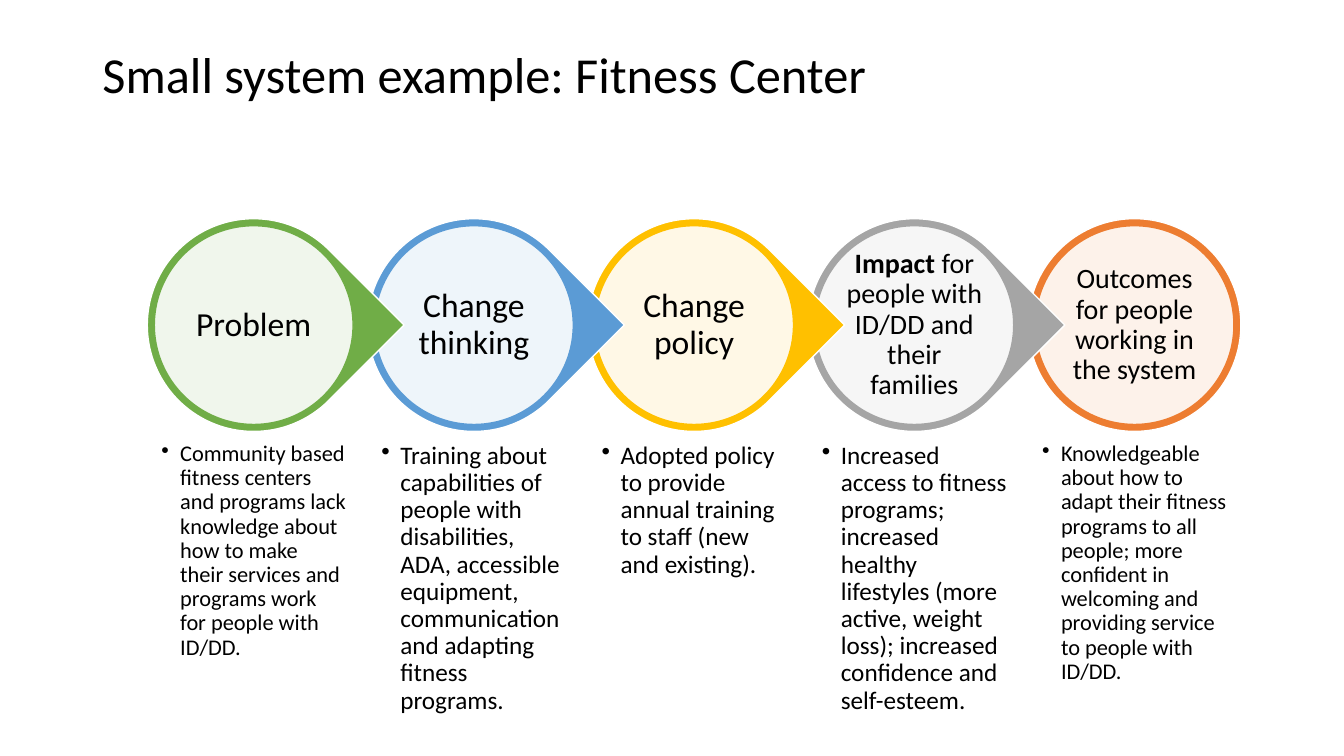
"""Build a slide of five linked circles, from problem to outcomes."""
import pptx
import pptx.util
import pptx.oxml.ns
import pptx.dml.color
import pptx.enum.shapes
import pptx.enum.text
import lxml.etree
from dataclasses import dataclass

Pt = pptx.util.Pt
Kind = pptx.enum.shapes.MSO_SHAPE
Align = pptx.enum.text.PP_ALIGN
Anchor = pptx.enum.text.MSO_ANCHOR


@dataclass(frozen=True)
class Theme:
    """Colours, font and type sizes."""
    font: str = "Calibri"
    ink: str = "000000"
    white: str = "FFFFFF"
    green: str = "70AD47"
    blue: str = "5B9BD5"
    gold: str = "FFC000"
    grey: str = "A5A5A5"
    orange: str = "ED7D31"
    title: int = 36
    big: int = 24
    mid: int = 20
    body: int = 18
    small: int = 16


THEME = Theme()
START, PITCH, MIDDLE = 181.2, 157.3, 232.2
OUTER, INNER, LABEL = 152, 142, 101.5
NOTE_TOP, NOTE_HIGH = 311, 83.5

STEPS = [
    (THEME.green, "", "Problem", THEME.big,
     "Community based fitness centers and programs lack knowledge about "
     "how to make their services and programs work for people with ID/DD.",
     THEME.small),
    (THEME.blue, "", "Change thinking", THEME.big,
     "Training about capabilities of people with disabilities, ADA, accessible "
     "equipment, communication and adapting fitness programs.",
     THEME.body),
    (THEME.gold, "", "Change policy", THEME.big,
     "Adopted policy to provide annual training to staff (new and existing).",
     THEME.body),
    (THEME.grey, "Impact", " for people with ID/DD and their families", THEME.mid,
     "Increased access to fitness programs; increased healthy lifestyles "
     "(more active, weight loss); increased confidence and self-esteem.",
     THEME.body),
    (THEME.orange, "", "Outcomes for people working in the system", THEME.mid,
     "Knowledgeable about how to adapt their fitness programs to all people; "
     "more confident in welcoming and providing service to people with ID/DD.",
     THEME.small),
]


def color(code):
    """Turn a hex code into a colour."""
    return pptx.dml.color.RGBColor.from_string(code)


def child(parent, tag, **attrs):
    """Add a drawing element to an XML parent."""
    name = pptx.oxml.ns.qn(tag)
    return lxml.etree.SubElement(parent, name, attrs)


def write(shape, text, *, size, lead="", align=Align.LEFT,
          anchor=Anchor.TOP, inset=None, bullet=False):
    """Write one paragraph, with an optional bold lead, into a shape."""
    frame = shape.text_frame
    frame.word_wrap = True
    frame.auto_size = pptx.enum.text.MSO_AUTO_SIZE.NONE
    frame.vertical_anchor = anchor
    if inset is not None:
        frame.margin_left = frame.margin_right = Pt(inset)
        frame.margin_top = frame.margin_bottom = Pt(inset)
    para = frame.paragraphs[0]
    para.alignment = align
    para.line_spacing = 0.9
    for part, bold in ((lead, True), (text, False)):
        if part:
            run = para.add_run()
            run.text = part
            run.font.name = THEME.font
            run.font.size = Pt(size)
            run.font.bold = bold
            run.font.color.rgb = color(THEME.ink)
    if bullet:
        props = para._p.get_or_add_pPr()
        props.set("marL", str(Pt(13.5)))
        props.set("indent", str(-Pt(13.5)))
        child(props, "a:buChar", char="•")


def disc(slide, kind, mid, size, fill, line, *, turn=0, alpha=None):
    """Draw a round shape centred on the row."""
    shape = slide.shapes.add_shape(
        kind, Pt(mid - size / 2), Pt(MIDDLE - size / 2), Pt(size), Pt(size))
    shape.shadow.inherit = False
    shape.rotation = turn
    shape.fill.solid()
    shape.fill.fore_color.rgb = color(fill)
    shape.line.color.rgb = color(line)
    shape.line.width = Pt(1)
    if alpha is not None:
        tone = shape._element.spPr.xpath("a:solidFill/a:srgbClr")[0]
        child(tone, "a:alpha", val=str(alpha * 1000))


def box(slide, mid, top, width, height, text, **form):
    """Add a text box centred on a column."""
    shape = slide.shapes.add_textbox(
        Pt(mid - width / 2), Pt(top), Pt(width), Pt(height))
    write(shape, text, **form)


def step(slide, index):
    """Draw one circle with its label and bullet."""
    tint, lead, label, size, note, small = STEPS[index]
    mid = START + index * PITCH
    last = index == len(STEPS) - 1
    kind, turn = (Kind.OVAL, 0) if last else (Kind.TEAR, 45)
    disc(slide, kind, mid, OUTER, tint, THEME.white, turn=turn)
    disc(slide, Kind.OVAL, mid, INNER, THEME.white, tint, alpha=90)
    box(slide, mid, MIDDLE - LABEL / 2, LABEL, LABEL, label, lead=lead,
        size=size, align=Align.CENTER, anchor=Anchor.MIDDLE, inset=2.2)
    box(slide, mid, NOTE_TOP, INNER, NOTE_HIGH, note,
        size=small, inset=5, bullet=True)


def main():
    """Build and save the slide."""
    deck = pptx.Presentation()
    deck.slide_width, deck.slide_height = Pt(960), Pt(540)
    slide = deck.slides.add_slide(deck.slide_layouts.get_by_name("Title Only"))
    title = slide.shapes.title
    title.left, title.top = Pt(66), Pt(28.8)
    title.width, title.height = Pt(828), Pt(53.3)
    write(title, "Small system example: Fitness Center",
          size=THEME.title, anchor=Anchor.MIDDLE)
    for index in reversed(range(len(STEPS))):
        step(slide, index)
    deck.save("out.pptx")


if __name__ == "__main__":
    main()
